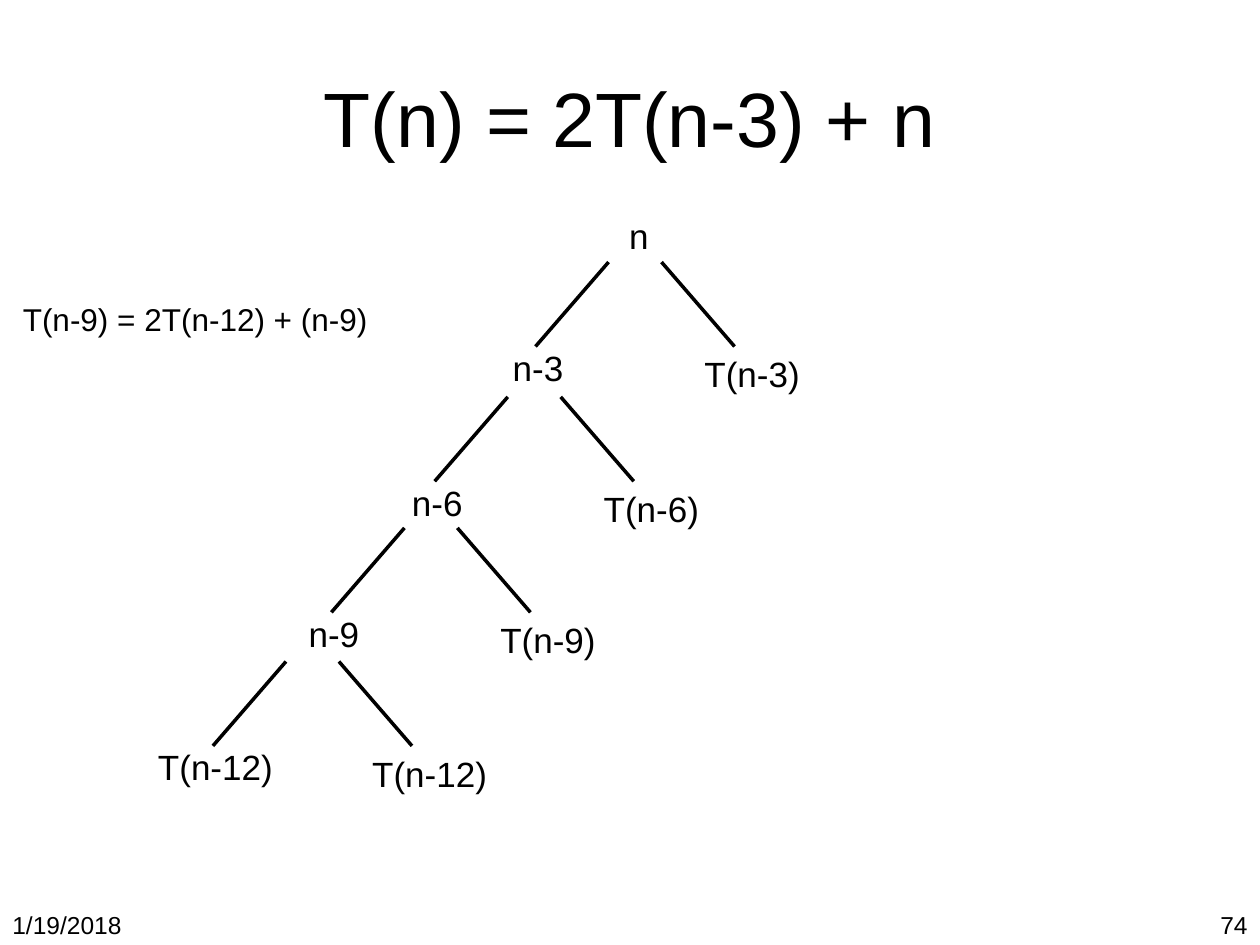
from pptx import Presentation
from pptx.enum import shapes, text
from pptx.dml.color import RGBColor
from pptx.oxml.ns import qn
from pptx.util import Inches, Pt
from lxml import etree

COLORS = {"ink": "000000", "paper": "FFFFFF"}
FONT = "Arial"
WIDTH, HEIGHT = 10, 7.5

# Each fork: apex x, top y, left label, right label
FORKS = [
    (5.04, 2.08, "n-3", "T(n-3)"),
    (4.24, 3.15, "n-6", "T(n-6)"),
    (3.42, 4.19, "n-9", "T(n-9)"),
    (2.48, 5.25, "T(n-12)", "T(n-12)"),
]
INNER, OUTER, DROP = 0.21, 0.79, 0.67  # branch reach from the apex, and height
LABEL_WIDTHS = {1: 0.36, 3: 0.61, 6: 0.96, 7: 1.12}  # by number of letters
LABEL_HEIGHT = 0.44


def place(shape, left, top, width, height):
    shape.left, shape.top = Inches(left), Inches(top)
    shape.width, shape.height = Inches(width), Inches(height)


def write(shape, wording, size, align):
    shape.text_frame.text = wording
    paragraph = shape.text_frame.paragraphs[0]
    paragraph.alignment = align
    font = paragraph.runs[0].font
    font.name, font.size = FONT, Pt(size)
    font.color.rgb = RGBColor.from_string(COLORS["ink"])


def add_text(slide, wording, box, size, align=text.PP_ALIGN.CENTER, wrap=False):
    shape = slide.shapes.add_textbox(*map(Inches, box))
    shape.text_frame.word_wrap = wrap
    if not wrap:
        shape.text_frame.auto_size = text.MSO_AUTO_SIZE.SHAPE_TO_FIT_TEXT
    write(shape, wording, size, align)


def add_label(slide, wording, center, top):
    width = LABEL_WIDTHS[len(wording)]
    add_text(slide, wording, (center - width / 2, top, width, LABEL_HEIGHT), 20)


def add_branch(slide, start, end):
    branch = slide.shapes.add_connector(
        shapes.MSO_CONNECTOR.STRAIGHT, *map(Inches, (*start, *end)))
    branch.line.color.rgb = RGBColor.from_string(COLORS["ink"])
    branch.line.width = Pt(2)
    etree.SubElement(branch._element.spPr, qn("a:effectLst"))


def add_fork(slide, apex, top, left_label, right_label):
    bottom = top + DROP
    for side in (-1, 1):
        add_branch(slide, (apex + side * INNER, top), (apex + side * OUTER, bottom))
    add_label(slide, left_label, apex - 0.77, bottom - 0.05)
    add_label(slide, right_label, apex + 0.93, bottom)


def add_title(slide, wording):
    title = slide.shapes.title
    place(title, 0.05 * WIDTH, 0.04 * HEIGHT, 0.9 * WIDTH, 1.25)
    title.text_frame.vertical_anchor = text.MSO_ANCHOR.MIDDLE
    write(title, wording, 44, text.PP_ALIGN.CENTER)


def add_footer(slide, date, number):
    width, height = 2.33, 0.33
    top = HEIGHT - height
    add_text(slide, date, (0, top, width, height), 14, text.PP_ALIGN.LEFT, True)
    add_text(slide, number, (WIDTH - width, top, width, height), 14,
             text.PP_ALIGN.RIGHT, True)


def main():
    presentation = Presentation()
    presentation.slide_width, presentation.slide_height = Inches(WIDTH), Inches(HEIGHT)
    slide = presentation.slides.add_slide(presentation.slide_layouts[5])
    slide.background.fill.solid()
    slide.background.fill.fore_color.rgb = RGBColor.from_string(COLORS["paper"])

    add_title(slide, "T(n) = 2T(n-3) + n")
    add_footer(slide, "1/19/2018", "74")

    # Recursion tree
    add_label(slide, "n", 5.07, 1.65)
    for fork in FORKS:
        add_fork(slide, *fork)

    # Recurrence being expanded
    add_text(slide, "T(n-9) = 2T(n-12) + (n-9)", (0.07, 2.33, 2.96, 0.4), 18)

    presentation.save("out.pptx")


if __name__ == "__main__":
    main()
